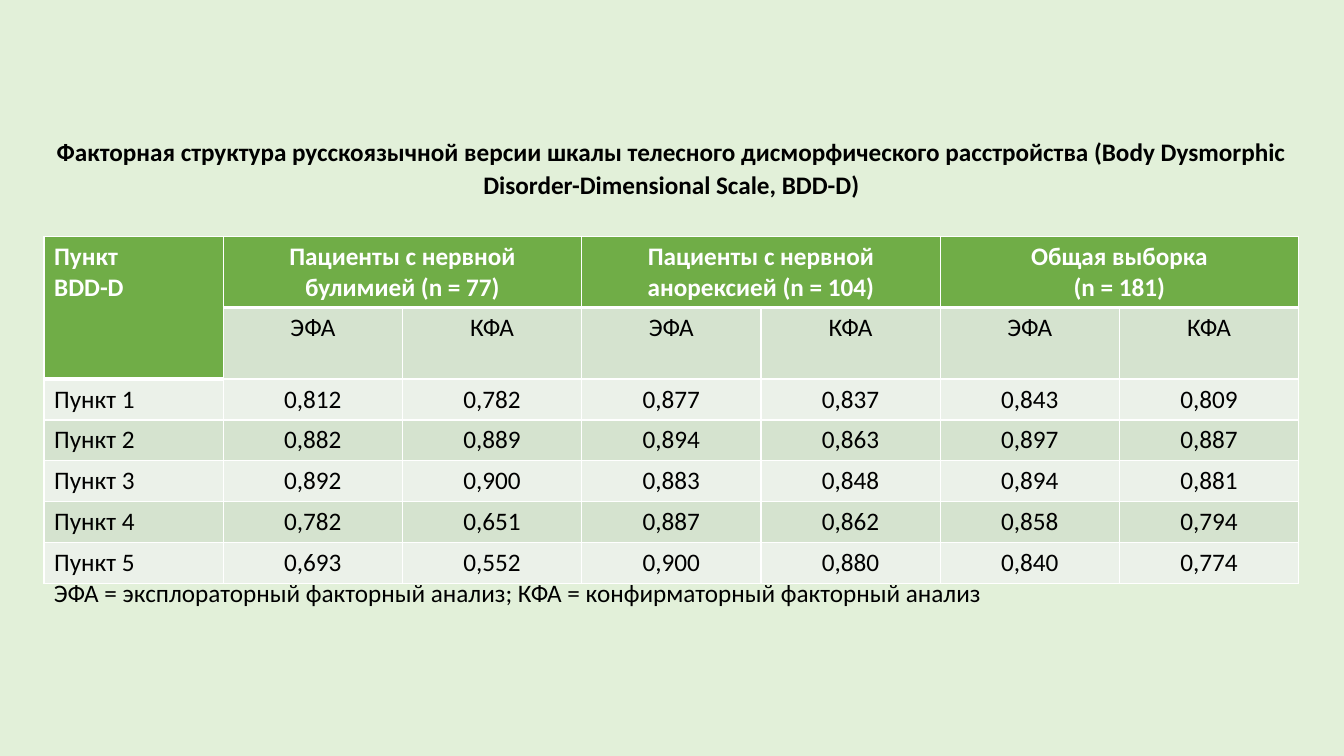
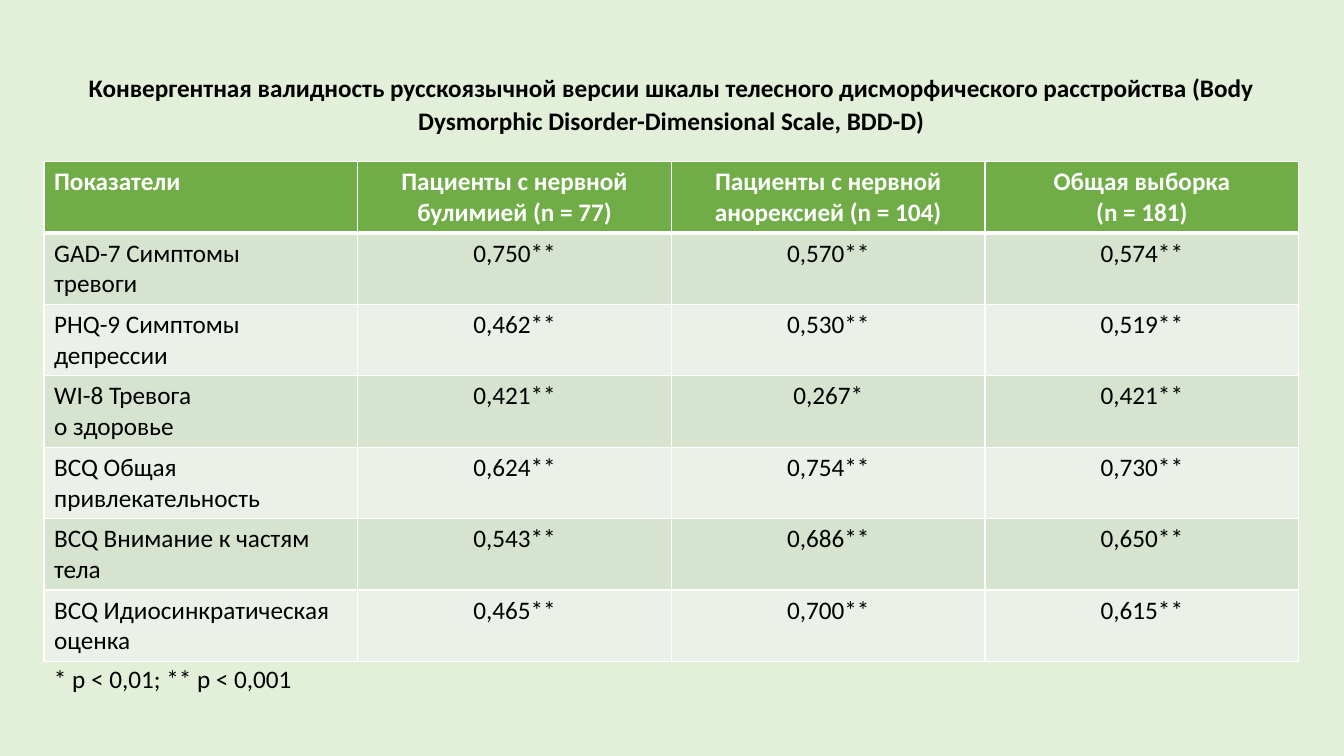
"""Builds two slides with psychometric tables for the BDD-D scale."""
from dataclasses import dataclass

from lxml import etree
from pptx import Presentation
from pptx.dml.color import RGBColor
from pptx.enum.text import PP_ALIGN
from pptx.oxml.ns import qn
from pptx.util import Emu, Pt

PX = 9525
SLIDE_WIDTH, SLIDE_HEIGHT = 1280, 720
LEFT, WIDTH = 42, 1195


@dataclass(frozen=True)
class Theme:
    background: str = "E2F0D9"
    header: str = "70AD47"
    bands: tuple = ("EBF1E9", "D5E3CF")
    border: str = "FFFFFF"
    header_text: str = "FFFFFF"
    text: str = "000000"
    font: str = "Calibri"
    size: int = 18
    line_spacing: float = 1.1
    thin: int = 1
    thick: int = 3


THEME = Theme()

GROUPS = [
    "Пациенты с нервной булимией (n = 77)",
    "Пациенты с нервной анорексией (n = 104)",
    "Общая выборка\n(n = 181)",
]
SCALE = "русскоязычной версии шкалы телесного дисморфического расстройства (Body Dysmorphic Disorder-Dimensional Scale, BDD-D)"

SLIDES = [
    {
        "title": f"Факторная структура {SCALE}",
        "title_top": 122,
        "table_top": 225,
        "row_heights": [68] * 2 + [39] * 5,
        "rows": [
            ["Пункт\nBDD-D", GROUPS[0], "", GROUPS[1], "", GROUPS[2], ""],
            [""] + ["ЭФА", "КФА"] * 3,
            ["Пункт 1", "0,812", "0,782", "0,877", "0,837", "0,843", "0,809"],
            ["Пункт 2", "0,882", "0,889", "0,894", "0,863", "0,897", "0,887"],
            ["Пункт 3", "0,892", "0,900", "0,883", "0,848", "0,894", "0,881"],
            ["Пункт 4", "0,782", "0,651", "0,887", "0,862", "0,858", "0,794"],
            ["Пункт 5", "0,693", "0,552", "0,900", "0,880", "0,840", "0,774"],
        ],
        "merges": [((0, 0), (1, 0))] + [((0, c), (0, c + 1)) for c in (1, 3, 5)],
        "header_cells": {(1, 0)},
        "note": "ЭФА = эксплораторный факторный анализ; КФА = конфирматорный факторный анализ",
        "note_top": 542,
    },
    {
        "title": f"Конвергентная валидность {SCALE}",
        "title_top": 61,
        "table_top": 154,
        "row_heights": [68] * 7,
        "rows": [
            ["Показатели"] + GROUPS,
            ["GAD-7 Симптомы\nтревоги", "0,750**", "0,570**", "0,574**"],
            ["PHQ-9 Симптомы депрессии", "0,462**", "0,530**", "0,519**"],
            ["WI-8 Тревога\nо здоровье", "0,421**", "0,267*", "0,421**"],
            ["BCQ Общая привлекательность", "0,624**", "0,754**", "0,730**"],
            ["BCQ Внимание к частям тела", "0,543**", "0,686**", "0,650**"],
            ["BCQ Идиосинкратическая оценка", "0,465**", "0,700**", "0,615**"],
        ],
        "merges": [],
        "header_cells": set(),
        "note": "* p < 0,01; ** p < 0,001",
        "note_top": 624,
    },
]


def px(length):
    return Emu(length * PX)


def rgb(color):
    return RGBColor.from_string(color)


def write(frame, text, color, bold, align):
    frame.text = text
    for paragraph in frame.paragraphs:
        paragraph.alignment = align
        font = paragraph.font
        font.name, font.size, font.bold = THEME.font, Pt(THEME.size), bold
        font.color.rgb = rgb(color)


def add_text(slide, text, top, height, bold=False, align=PP_ALIGN.LEFT):
    frame = slide.shapes.add_textbox(px(LEFT), px(top), px(WIDTH), px(height)).text_frame
    frame.word_wrap = True
    write(frame, text, THEME.text, bold, align)
    for paragraph in frame.paragraphs:
        paragraph.line_spacing = THEME.line_spacing


def add_borders(cell, bottom):
    properties = cell._tc.get_or_add_tcPr()
    widths = {"lnL": THEME.thin, "lnR": THEME.thin, "lnT": THEME.thin, "lnB": bottom}
    for side, width in widths.items():
        line = etree.SubElement(properties, qn(f"a:{side}"), w=str(Pt(width)))
        fill = etree.SubElement(line, qn("a:solidFill"))
        etree.SubElement(fill, qn("a:srgbClr"), val=THEME.border)


def style_cell(cell, text, row, column, is_header):
    add_borders(cell, THEME.thick if is_header else THEME.thin)
    cell.fill.solid()
    cell.fill.fore_color.rgb = rgb(THEME.header if is_header else THEME.bands[row % 2])
    color = THEME.header_text if is_header else THEME.text
    write(cell.text_frame, text, color, is_header, PP_ALIGN.CENTER if column else PP_ALIGN.LEFT)


def add_grid(slide, content):
    rows, heights = content["rows"], content["row_heights"]
    columns = len(rows[0])
    table = slide.shapes.add_table(
        len(rows), columns, px(LEFT), px(content["table_top"]), px(WIDTH), px(sum(heights))
    ).table
    for column in table.columns:
        column.width = px(WIDTH) // columns
    for table_row, height in zip(table.rows, heights):
        table_row.height = px(height)
    for r, values in enumerate(rows):
        for c, text in enumerate(values):
            is_header = r == 0 or (r, c) in content["header_cells"]
            style_cell(table.cell(r, c), text, r, c, is_header)
    for first, last in content["merges"]:
        table.cell(*first).merge(table.cell(*last))


def main():
    presentation = Presentation()
    presentation.slide_width, presentation.slide_height = px(SLIDE_WIDTH), px(SLIDE_HEIGHT)
    for content in SLIDES:
        slide = presentation.slides.add_slide(presentation.slide_layouts[6])
        slide.background.fill.solid()
        slide.background.fill.fore_color.rgb = rgb(THEME.background)
        add_text(slide, content["title"], content["title_top"], 80, True, PP_ALIGN.CENTER)
        add_grid(slide, content)
        add_text(slide, content["note"], content["note_top"], 42)
    presentation.save("out.pptx")


if __name__ == "__main__":
    main()
